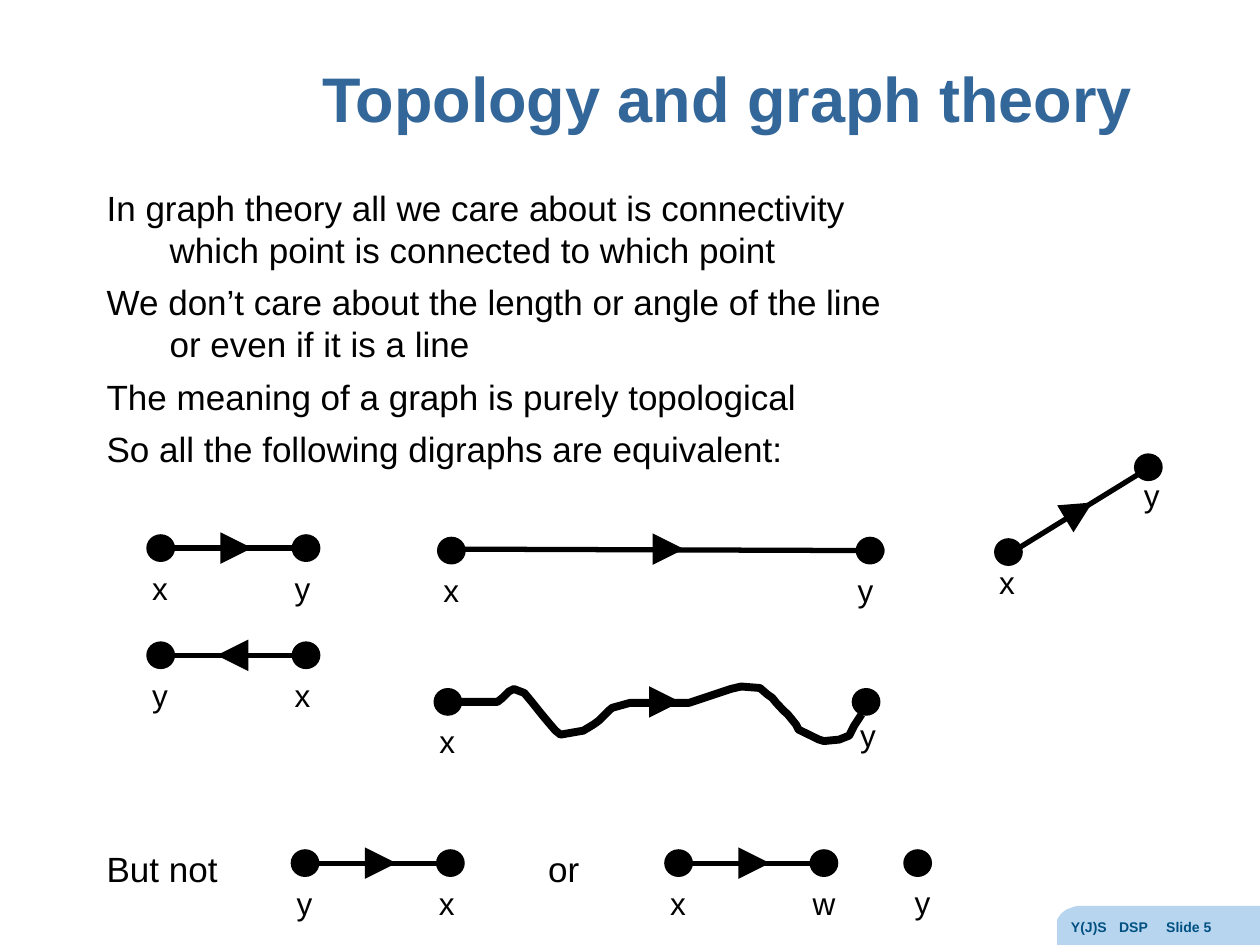
from lxml.etree import SubElement
from pptx import Presentation
from pptx.dml.color import RGBColor
from pptx.enum.shapes import MSO_CONNECTOR, MSO_SHAPE
from pptx.enum.text import MSO_ANCHOR, PP_ALIGN
from pptx.oxml.ns import qn
from pptx.util import Cm, Pt

color = RGBColor.from_string
BLACK = "000000"

presentation = Presentation()
presentation.slide_width = Cm(25.4)
presentation.slide_height = Cm(19.05)
slide = presentation.slides.add_slide(presentation.slide_layouts[6])
shapes = slide.shapes


def add_text(left, top, width, height, text, size, hex_color=BLACK, bold=False):
    box = shapes.add_textbox(Cm(left), Cm(top), Cm(width), Cm(height))
    text_frame = box.text_frame
    text_frame.word_wrap = True
    text_frame.text = text
    for paragraph in text_frame.paragraphs:
        for run in paragraph.runs:
            run.font.name = "Arial"
            run.font.size = Pt(size)
            run.font.bold = bold
            run.font.color.rgb = color(hex_color)
    return text_frame


def add_outline(points, close):
    start, *rest = [(Cm(x), Cm(y)) for x, y in points]
    builder = shapes.build_freeform(*start)
    builder.add_line_segments(rest, close=close)
    outline = builder.convert_to_shape()
    outline.shadow.inherit = False
    return outline


footer_tab = add_outline([
    (25.4, 18.26), (25.4, 19.05), (21.31, 19.05), (21.31, 18.54), (21.39, 18.42),
    (21.49, 18.34), (21.62, 18.29), (21.72, 18.26),
], close=True)
footer_tab.fill.solid()
footer_tab.fill.fore_color.rgb = color("B7D5EF")
footer_tab.line.fill.background()

title = add_text(5.38, 0.46, 18.57, 3.18, "Topology and graph theory", 36, "336699", True)
title.vertical_anchor = MSO_ANCHOR.MIDDLE
title.paragraphs[0].alignment = PP_ALIGN.CENTER
title.paragraphs[0].line_spacing = 0.9

body_lines = [
    ("In graph theory all we care about is connectivity", False),
    ("which point is connected to which point", True),
    ("We don’t care about the length or angle of the line", False),
    ("or even if it is a line", True),
    ("The meaning of a graph is purely topological", False),
    ("So all the following digraphs are equivalent:", False),
]
body = add_text(1.9, 3.63, 17.02, 6.2, "\n".join(line for line, _ in body_lines), 20)
for paragraph, (_, indented) in zip(body.paragraphs, body_lines):
    paragraph.line_spacing = Pt(24)
    paragraph.space_before = Pt(0 if indented else 6)
    if indented:
        paragraph._p.get_or_add_pPr().set("marL", str(Cm(1.27)))

for left, width, text in [(1.9, 4, "But not"), (10.8, 2, "or")]:
    add_text(left, 16.97, width, 1.02, text, 20).paragraphs[0].line_spacing = Pt(24)

footer = add_text(21.34, 18.39, 4.06, 0.66, "Y(J)S\tDSP\tSlide 5", 8, "005081", True)
tab_stops = SubElement(footer.paragraphs[0]._p.get_or_add_pPr(), qn("a:tabLst"))
for position in (0.97, 1.92):
    SubElement(tab_stops, qn("a:tab"), pos=str(Cm(position)), algn="l")

dots = [(8.81, 10.82), (17.25, 10.82), (20.04, 10.85), (22.86, 9.14),
        (8.74, 13.87), (17.17, 13.87), (18.21, 17.12)]
labels = [("x", 8.69, 11.38), ("y", 17.04, 11.38), ("x", 19.89, 11.23), ("y", 22.81, 9.47),
          ("x", 8.61, 14.43), ("y", 17.09, 14.3), ("y", 18.19, 17.68)]
edges = [(9.25, 11.07, 17.83, 11.1), (20.24, 11.23, 23.29, 9.35)]
arrows = [(13.21, 11.07, 13.79, 11.07), (21.59, 10.39, 22.02, 10.13), (13.13, 14.15, 13.72, 14.15)]

short_graphs = [
    (2.95, 10.77, "xy", 1.55, 2.13),
    (2.95, 12.93, "yx", 2.01, 1.42),
    (5.86, 17.12, "yx", 1.55, 2.13),
    (13.39, 17.12, "xw", 1.55, 2.13),
]
for left, top, names, arrow_start, arrow_end in short_graphs:
    middle = top + 0.28
    dots += [(left, top), (left + 2.93, top)]
    labels += [(names[0], left - 0.13, top + 0.57), (names[1], left + 2.74, top + 0.57)]
    edges.append((left + 0.46, middle, left + 3.1, middle))
    arrows.append((left + arrow_start, middle, left + arrow_end, middle))

for left, top in dots:
    dot = shapes.add_shape(MSO_SHAPE.OVAL, Cm(left), Cm(top), Cm(0.58), Cm(0.56))
    dot.shadow.inherit = False
    dot.fill.solid()
    dot.fill.fore_color.rgb = color(BLACK)
    dot.line.fill.background()

for name, left, top in labels:
    add_text(left, top, 0.97, 1.02, name, 18)

for lines, width, has_arrow in [(edges, 3, False), (arrows, 6, True)]:
    for ends in lines:
        connector = shapes.add_connector(MSO_CONNECTOR.STRAIGHT, *map(Cm, ends))
        connector.line.color.rgb = color(BLACK)
        connector.line.width = Pt(width)
        if has_arrow:
            SubElement(connector.line._get_or_add_ln(), qn("a:tailEnd"), type="triangle")
        SubElement(connector._element.spPr, qn("a:effectLst"))

wavy_edge = add_outline([
    (8.99, 14.07), (9.17, 14.15), (10.03, 14.15), (10.13, 14.07), (10.26, 13.94),
    (10.36, 13.89), (10.57, 13.97), (10.72, 14.15), (10.92, 14.4), (11.07, 14.58),
    (11.2, 14.73), (11.3, 14.81), (11.76, 14.73), (11.96, 14.61), (12.07, 14.53),
    (12.27, 14.33), (12.34, 14.27), (12.7, 14.17), (13.89, 14.17), (14.4, 14),
    (14.73, 13.89), (14.94, 13.84), (15.32, 13.87), (15.47, 14), (15.57, 14.07),
    (15.65, 14.17), (15.8, 14.33), (15.88, 14.4), (16.05, 14.61), (16.1, 14.71),
    (16.51, 14.91), (16.61, 14.94), (16.92, 14.91), (17.12, 14.83), (17.17, 14.73),
    (17.22, 14.63), (17.37, 14.4),
], close=False)
wavy_edge.fill.background()
wavy_edge.line.color.rgb = color(BLACK)
wavy_edge.line.width = Pt(4.5)
SubElement(wavy_edge.line._get_or_add_ln(), qn("a:round"))

presentation.save("out.pptx")
